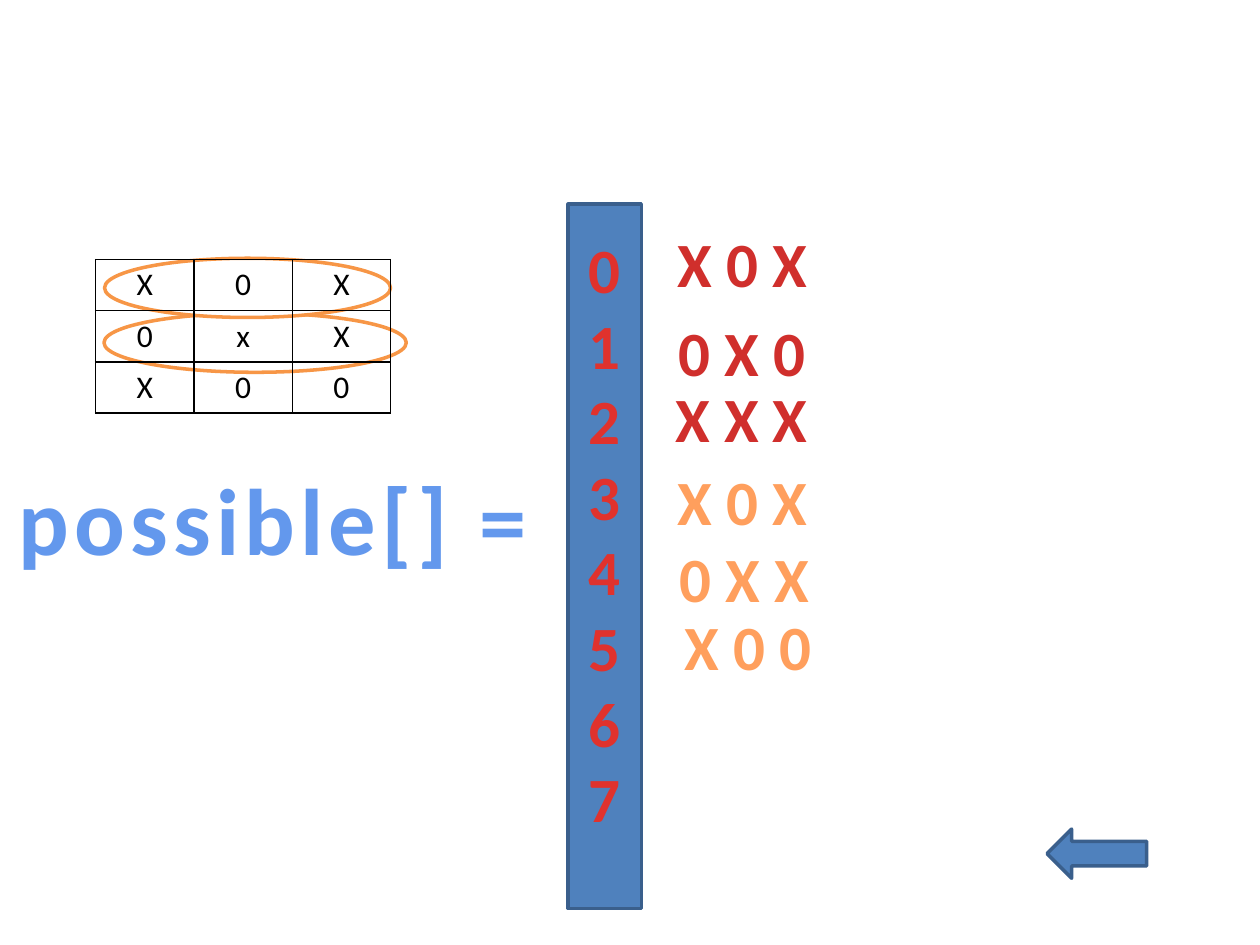
from dataclasses import dataclass

from lxml.etree import SubElement
from pptx import Presentation
from pptx.dml.color import RGBColor
from pptx.enum.shapes import MSO_SHAPE
from pptx.enum.text import MSO_ANCHOR, MSO_AUTO_SIZE, PP_ALIGN
from pptx.oxml.ns import qn
from pptx.util import Inches, Pt

WHITE = RGBColor(0xFF, 0xFF, 0xFF)
BLACK = RGBColor(0, 0, 0)
BLUE = RGBColor(0x4F, 0x81, 0xBD)
DARK_BLUE = RGBColor(0x3A, 0x5F, 0x8C)
TITLE_BLUE = RGBColor(0x63, 0x98, 0xED)
SHADOW_BLUE = RGBColor(0xA9, 0xD0, 0xFA)
ORANGE = RGBColor(0xF7, 0x96, 0x46)
LIGHT_ORANGE = RGBColor(0xFF, 0x9F, 0x5D)
INDEX_RED = RGBColor(0xE0, 0x32, 0x2D)
RED = RGBColor(0xD0, 0x2F, 0x2C)

# The page is a grid of 100 columns by 75 rows
WIDTH, HEIGHT = Inches(10), Inches(7.5)
COLUMN, ROW = WIDTH // 100, HEIGHT // 75


@dataclass(frozen=True)
class Area:
    """A rectangle in grid columns and rows."""
    column: float
    row: float
    columns: float
    rows: float

    def lengths(self) -> tuple[int, ...]:
        return (round(self.column * COLUMN), round(self.row * ROW),
                round(self.columns * COLUMN), round(self.rows * ROW))


@dataclass(frozen=True)
class Figure:
    kind: MSO_SHAPE
    area: Area
    fill: RGBColor
    line: RGBColor


@dataclass(frozen=True)
class Label:
    text: str
    area: Area
    color: RGBColor


FIGURES = [
    Figure(MSO_SHAPE.OVAL, Area(8.25, 24.85, 24, 4.7), WHITE, ORANGE),
    Figure(MSO_SHAPE.OVAL, Area(8.3, 20.5, 22.7, 4.7), WHITE, ORANGE),
    Figure(MSO_SHAPE.RECTANGLE, Area(45.1, 16.2, 5.8, 55.9), BLUE, DARK_BLUE),
    Figure(MSO_SHAPE.LEFT_ARROW, Area(83.1, 65.8, 7.9, 3.9), BLUE, DARK_BLUE),
]

BOARD = ["X0X", "0xX", "X00"]
BOARD_AREA = Area(7.6, 20.6, 23.4, 12.2)

LINES = [
    Label("X 0 X", Area(52.7, 17.3, 12.4, 7.1), RED),
    Label("0 X 0", Area(52.8, 24.4, 12.2, 7.1), RED),
    Label("X X X", Area(52.5, 29.6, 12.7, 7.1), RED),
    Label("X 0 X", Area(52.7, 36.2, 12.4, 7.1), LIGHT_ORANGE),
    Label("0 X X", Area(52.9, 42.3, 12.4, 7.1), LIGHT_ORANGE),
    Label("X 0 0", Area(53.3, 47.7, 12.2, 7.1), LIGHT_ORANGE),
]


def write(frame, text: str, *, size: float, color: RGBColor, bold: bool = False,
          spacing: float = 0, shadow: RGBColor | None = None) -> None:
    """Fill a text frame with centred paragraphs, one for each line."""
    for number, line in enumerate(text.split("\n")):
        para = frame.add_paragraph() if number else frame.paragraphs[0]
        para.alignment = PP_ALIGN.CENTER
        span = para.add_run()
        span.text = line
        span.font.size, span.font.bold = Pt(size), bold
        span.font.color.rgb = color
        properties = span.font._element
        if spacing:
            properties.set("spc", str(round(spacing * 100)))
        if shadow is not None:
            effects = SubElement(properties, qn("a:effectLst"))
            outer = SubElement(effects, qn("a:outerShdw"), blurRad="25400",
                               dist="25400", dir="2700000")
            SubElement(outer, qn("a:srgbClr"), val=str(shadow))
        span.font.name = "Calibri"


def add_label(page, text: str, area: Area, **style) -> None:
    box = page.shapes.add_textbox(*area.lengths())
    box.text_frame.word_wrap = False
    box.text_frame.auto_size = MSO_AUTO_SIZE.SHAPE_TO_FIT_TEXT
    write(box.text_frame, text, bold=True, **style)


def add_figure(page, figure: Figure) -> None:
    shape = page.shapes.add_shape(figure.kind, *figure.area.lengths())
    shape.shadow.inherit = False
    shape.fill.solid()
    shape.fill.fore_color.rgb = figure.fill
    shape.line.color.rgb = figure.line
    shape.line.width = Pt(2)


def add_borders(cell, color: RGBColor) -> None:
    properties = cell._tc.get_or_add_tcPr()
    for position, side in enumerate(("lnL", "lnR", "lnT", "lnB")):
        line = SubElement(properties, qn(f"a:{side}"), w=str(Pt(1)))
        fill = SubElement(line, qn("a:solidFill"))
        SubElement(fill, qn("a:srgbClr"), val=str(color))
        properties.insert(position, line)


def add_board(page, marks: list[str], area: Area) -> None:
    table = page.shapes.add_table(len(marks), len(marks[0]), *area.lengths()).table
    table.first_row = table.horz_banding = False
    for row, line in enumerate(marks):
        for column, mark in enumerate(line):
            cell = table.cell(row, column)
            cell.fill.background()
            cell.vertical_anchor = MSO_ANCHOR.TOP
            add_borders(cell, BLACK)
            write(cell.text_frame, mark, size=18, color=BLACK)


def main() -> None:
    deck = Presentation()
    deck.slide_width, deck.slide_height = WIDTH, HEIGHT
    page = deck.slides.add_slide(deck.slide_layouts[6])

    # Ovals behind the board, index bar and arrow
    for figure in FIGURES:
        add_figure(page, figure)

    # Array indices on the bar
    add_label(page, "\n".join(map(str, range(8))), Area(45.7, 17.8, 4.6, 49.5),
              size=36, color=INDEX_RED, spacing=0.5)

    # Game board
    add_board(page, BOARD, BOARD_AREA)

    # Lines stored in the array
    for label in LINES:
        add_label(page, label.text, label.area, size=36, color=label.color)

    # Array name
    add_label(page, "possible[] =", Area(0.1, 36.1, 43.2, 10.1), size=54,
              color=TITLE_BLUE, spacing=3, shadow=SHADOW_BLUE)

    deck.save("out.pptx")


if __name__ == "__main__":
    main()
